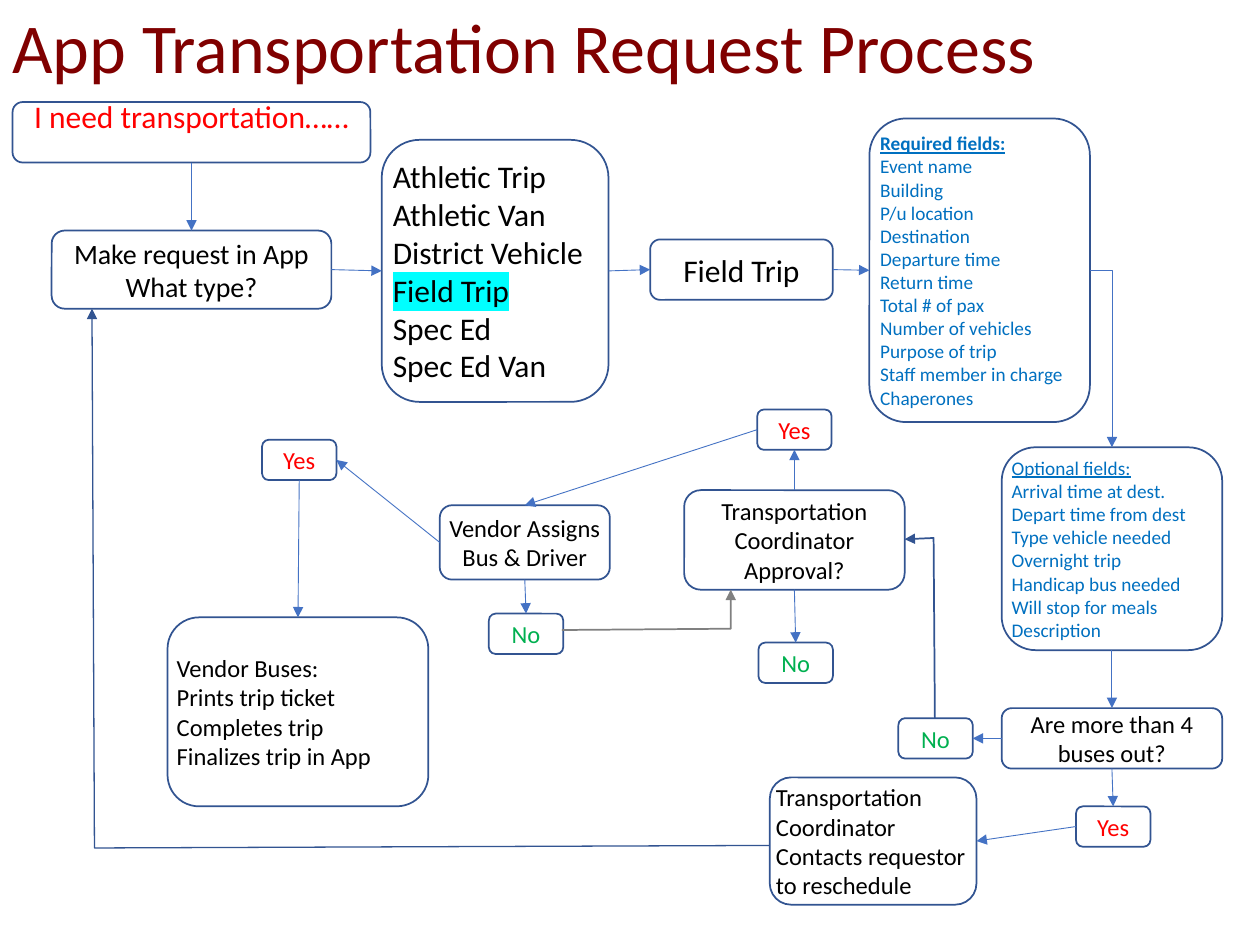
from dataclasses import dataclass

from lxml import etree
from pptx import Presentation
from pptx.dml.color import RGBColor
from pptx.enum.shapes import MSO_CONNECTOR, MSO_SHAPE
from pptx.enum.text import MSO_ANCHOR, PP_ALIGN
from pptx.oxml.ns import qn
from pptx.util import Inches, Pt

ROUNDED = MSO_SHAPE.ROUNDED_RECTANGLE
STRAIGHT, ELBOW = MSO_CONNECTOR.STRAIGHT, MSO_CONNECTOR.ELBOW
MIDDLE = MSO_ANCHOR.MIDDLE
LEFT, CENTER = PP_ALIGN.LEFT, PP_ALIGN.CENTER
TOP, WEST, BOTTOM, EAST = range(4)

FONT = "Calibri"
MAROON, BLACK, RED, GREEN, BLUE = "800000", "000000", "FF0000", "00B050", "0070C0"
OUTLINE, ARROW, GRAY, CYAN = "325491", "4472C4", "808080", "00FFFF"


@dataclass
class Box:
    left: float
    top: float
    width: float
    height: float
    text: str
    size: int = 14
    color: str = BLACK
    align: int = CENTER
    bottom_inset: float = 0


@dataclass
class Link:
    start: str
    start_side: int
    end: str
    end_side: int
    kind: int = STRAIGHT


@dataclass
class Route:
    points: list
    color: str = OUTLINE
    weight: float = 1


def answer(left: float, top: float, text: str) -> Box:
    return Box(left, top, 0.59, 0.32, text, color=RED if text == "Yes" else GREEN)


BOXES = {
    "need": Box(0.1, 0.81, 2.84, 0.48, "I need transportation……", 18, RED, bottom_inset=0.26),
    "request": Box(0.41, 1.83, 2.22, 0.62, "Make request in App\nWhat type?", 16),
    "types": Box(3.03, 1.11, 1.8, 2.08,
                 "Athletic Trip\nAthletic Van\nDistrict Vehicle\nField Trip\nSpec Ed\nSpec Ed Van",
                 18, align=LEFT),
    "field trip": Box(5.16, 1.9, 1.45, 0.48, "Field Trip", 18),
    "required": Box(6.9, 0.94, 1.75, 2.41,
                    "Required fields:\nEvent name\nBuilding\nP/u location\nDestination\n"
                    "Departure time\nReturn time\nTotal # of pax\nNumber of vehicles\n"
                    "Purpose of trip\nStaff member in charge\nChaperones", 11, BLUE, LEFT),
    "optional": Box(7.95, 3.55, 1.75, 1.61,
                    "Optional fields:\nArrival time at dest.\nDepart time from dest\n"
                    "Type vehicle needed\nOvernight trip\nHandicap bus needed\n"
                    "Will stop for meals\nDescription", 11, BLUE, LEFT),
    "buses out": Box(7.95, 5.62, 1.75, 0.48, "Are more than 4 buses out?"),
    "buses yes": answer(8.54, 6.4, "Yes"),
    "buses no": answer(7.13, 5.7, "No"),
    "reschedule": Box(6.11, 6.17, 1.64, 1.01,
                      "Transportation Coordinator\nContacts requestor to reschedule", align=LEFT),
    "approval": Box(5.43, 3.89, 1.75, 0.79, "Transportation Coordinator\nApproval?"),
    "approval yes": answer(6.01, 3.25, "Yes"),
    "approval no": answer(6.02, 5.1, "No"),
    "assigns": Box(3.49, 4.01, 1.35, 0.59, "Vendor Assigns Bus & Driver"),
    "assigns yes": answer(2.08, 3.49, "Yes"),
    "assigns no": answer(3.88, 4.87, "No"),
    "buses": Box(1.33, 4.9, 2.07, 1.5,
                 "Vendor Buses:\nPrints trip ticket\nCompletes trip\nFinalizes trip in App",
                 align=LEFT),
}

LINKS = [
    Link("need", BOTTOM, "request", TOP),
    Link("request", EAST, "types", WEST),
    Link("types", EAST, "field trip", WEST),
    Link("field trip", EAST, "required", WEST),
    Link("required", EAST, "optional", TOP, ELBOW),
    Link("optional", BOTTOM, "buses out", TOP),
    Link("buses out", BOTTOM, "buses yes", TOP),
    Link("buses out", WEST, "buses no", EAST),
    Link("buses yes", WEST, "reschedule", EAST),
    Link("approval", TOP, "approval yes", BOTTOM),
    Link("approval", BOTTOM, "approval no", TOP),
    Link("approval yes", WEST, "assigns", TOP),
    Link("assigns", WEST, "assigns yes", EAST),
    Link("assigns", BOTTOM, "assigns no", TOP),
    Link("assigns yes", BOTTOM, "buses", TOP),
]

ROUTES = [
    Route([(7.42, 5.7), (7.41, 4.27), (7.18, 4.28)]),
    Route([(4.46, 5), (5.8, 4.99), (5.8, 4.68)], GRAY),
    Route([(6.11, 6.71), (0.75, 6.73), (0.73, 2.45)], weight=0.75),
]


def rgb(value: str) -> RGBColor:
    return RGBColor.from_string(value)


def style_run(r, size: int, color: str) -> None:
    r.font.name = FONT
    r.font.size = Pt(size)
    r.font.color.rgb = rgb(color)


def style_line(sp, color: str, weight: float) -> None:
    sp.line.color.rgb = rgb(color)
    sp.line.width = Pt(weight)


def add_arrowhead(sp) -> None:
    ln = sp.line._get_or_add_ln()
    etree.SubElement(ln, qn("a:tailEnd"), type="triangle")


def highlight(r, color: str) -> None:
    mark = etree.Element(qn("a:highlight"))
    etree.SubElement(mark, qn("a:srgbClr"), val=color)
    r.font._element.find(qn("a:solidFill")).addnext(mark)


def add_title(s, text: str) -> None:
    sp = s.shapes.add_textbox(0, 0, Inches(8.61), Inches(0.81))
    tf = sp.text_frame
    tf.word_wrap = True
    tf.vertical_anchor = MIDDLE
    tf.text = text
    p = tf.paragraphs[0]
    p.line_spacing = 0.9
    style_run(p.runs[0], 40, MAROON)


def add_box(s, box: Box):
    sp = s.shapes.add_shape(ROUNDED, Inches(box.left), Inches(box.top),
                            Inches(box.width), Inches(box.height))
    sp.shadow.inherit = False
    sp.fill.background()
    style_line(sp, OUTLINE, 1)
    tf = sp.text_frame
    tf.margin_left = tf.margin_right = tf.margin_top = 0
    tf.margin_bottom = Inches(box.bottom_inset)
    tf.vertical_anchor = MIDDLE
    tf.text = box.text
    for p in tf.paragraphs:
        p.alignment = box.align
        style_run(p.runs[0], box.size, box.color)
    return sp


def add_link(s, link: Link, shapes: dict) -> None:
    cx = s.shapes.add_connector(link.kind, 0, 0, 0, 0)
    cx.begin_connect(shapes[link.start], link.start_side)
    cx.end_connect(shapes[link.end], link.end_side)
    style_line(cx, ARROW, 0.5)
    add_arrowhead(cx)
    sp_pr = cx._element.spPr
    etree.SubElement(sp_pr, qn("a:effectLst"))
    if link.kind == ELBOW:  # a single bend
        sp_pr.find(qn("a:prstGeom")).set("prst", "bentConnector2")


def add_route(s, route: Route) -> None:
    start, *rest = [(Inches(x), Inches(y)) for x, y in route.points]
    builder = s.shapes.build_freeform(*start)
    builder.add_line_segments(rest, close=False)
    sp = builder.convert_to_shape()
    sp.shadow.inherit = False
    sp.fill.background()
    style_line(sp, route.color, route.weight)
    add_arrowhead(sp)


def main() -> None:
    prs = Presentation()
    prs.slide_width, prs.slide_height = Inches(10), Inches(7.5)
    s = prs.slides.add_slide(prs.slide_layouts[6])

    # Title and steps
    add_title(s, "App Transportation Request Process")
    shapes = {name: add_box(s, box) for name, box in BOXES.items()}

    # Emphasis inside the lists
    highlight(shapes["types"].text_frame.paragraphs[3].runs[0], CYAN)
    for name in ("required", "optional"):
        font = shapes[name].text_frame.paragraphs[0].runs[0].font
        font.underline = True
        font.bold = name == "required"

    # Arrows between steps
    for link in LINKS:
        add_link(s, link, shapes)
    for route in ROUTES:
        add_route(s, route)

    prs.save("out.pptx")


if __name__ == "__main__":
    main()
